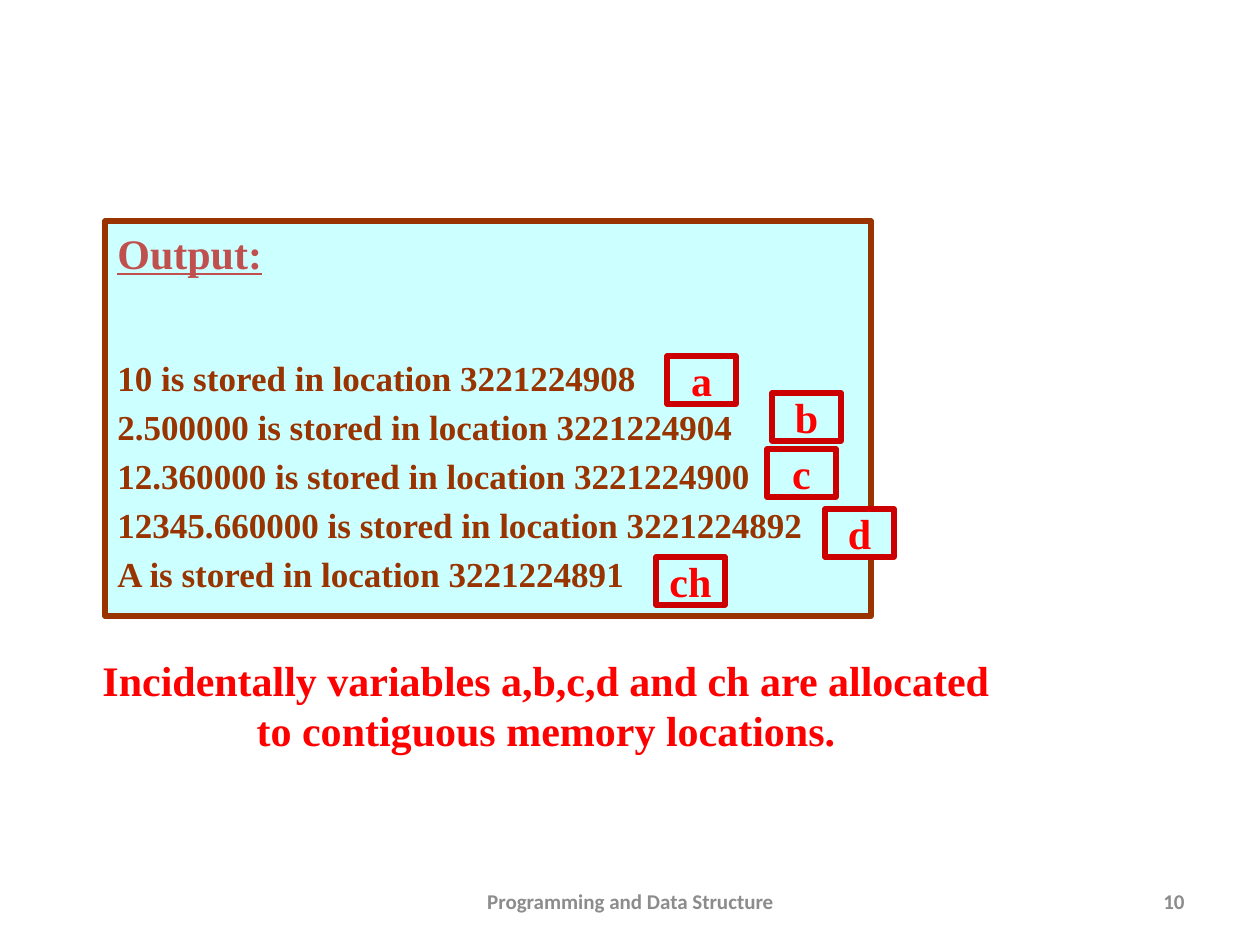
from pptx import Presentation
from pptx.dml.color import RGBColor
from pptx.enum.shapes import MSO_SHAPE
from pptx.enum.text import MSO_ANCHOR, PP_ALIGN
from pptx.util import Emu, Pt

EMU_PER_PX = 914400 / 126
LINE_HEIGHT = 1.2
SERIF, SANS = "Times New Roman", "Calibri"
COLORS = {
    "panel": "CCFFFF",
    "brown": "993300",
    "heading": "C0504D",
    "tag_line": "CC0000",
    "red": "FF0000",
    "gray": "8C8C8C",
}
HEADING = {"name": SERIF, "size": Pt(24), "bold": True, "underline": True}
STRONG = {"name": SERIF, "size": Pt(24), "bold": True}
OUTPUT = {"name": SERIF, "size": Pt(20), "bold": True}
FOOTER = {"name": SANS, "size": Pt(12), "bold": True}

OUTPUT_LINES = [
    "10 is stored in location 3221224908",
    "2.500000 is stored in location 3221224904",
    "12.360000 is stored in location 3221224900",
    "12345.660000 is stored in location 3221224892",
    "A is stored in location 3221224891",
]
# Variable name with the left and top of its tag
TAGS = [("a", 667, 356), ("b", 772, 393), ("c", 767, 449),
        ("d", 825, 509), ("ch", 656, 557)]


def px(length):
    return Emu(round(length * EMU_PER_PX))


def rgb(name):
    return RGBColor.from_string(COLORS[name])


def write(para, text, style, color, align=PP_ALIGN.LEFT, before=0):
    para.alignment = align
    para.space_before = Pt(before)
    para.line_spacing = Pt(round(style["size"].pt * LINE_HEIGHT, 1))
    span = para.add_run()
    span.text = text
    for key, value in style.items():
        setattr(span.font, key, value)
    span.font.color.rgb = rgb(color)


def add_text(page, area, lines, style, color, align, wrap=True):
    box = page.shapes.add_textbox(*map(px, area))
    frame = box.text_frame
    frame.word_wrap = wrap
    frame.vertical_anchor = MSO_ANCHOR.MIDDLE
    for index, line in enumerate(lines):
        para = frame.add_paragraph() if index else frame.paragraphs[0]
        write(para, line, style, color, align)


def add_panel(page, area, line_color, anchor, wrap):
    panel = page.shapes.add_shape(MSO_SHAPE.RECTANGLE, *map(px, area))
    panel.shadow.inherit = False
    panel.fill.solid()
    panel.fill.fore_color.rgb = rgb("panel")
    panel.line.color.rgb = rgb(line_color)
    panel.line.width = Pt(3)
    frame = panel.text_frame
    frame.word_wrap = wrap
    frame.vertical_anchor = anchor
    return frame


def add_output(page):
    frame = add_panel(page, (105, 221, 766, 395), "brown", MSO_ANCHOR.TOP, True)
    write(frame.paragraphs[0], "Output:", HEADING, "heading")
    for index, line in enumerate(OUTPUT_LINES):
        # The first result stands clear of the heading
        write(frame.add_paragraph(), line, OUTPUT, "brown",
              before=4 if index else 45)


def add_tag(page, name, left, top):
    frame = add_panel(page, (left, top, 69, 48), "tag_line",
                      MSO_ANCHOR.MIDDLE, False)
    write(frame.paragraphs[0], name, STRONG, "red", PP_ALIGN.CENTER)


def main():
    deck = Presentation()
    deck.slide_width, deck.slide_height = px(1260), px(945)
    page = deck.slides.add_slide(deck.slide_layouts[6])

    # Footer and page number
    add_text(page, (431, 876, 399, 50), ["Programming and Data Structure"],
             FOOTER, "gray", PP_ALIGN.CENTER)
    add_text(page, (903, 876, 294, 50), ["10"], FOOTER, "gray", PP_ALIGN.RIGHT)

    # Program output and the remark below it
    add_output(page)
    add_text(page, (90, 648, 912, 113),
             ["Incidentally variables a,b,c,d and ch are allocated",
              "to contiguous memory locations."],
             STRONG, "red", PP_ALIGN.CENTER, wrap=False)

    # Variable tags
    for name, left, top in TAGS:
        add_tag(page, name, left, top)

    deck.save("out.pptx")


if __name__ == "__main__":
    main()
